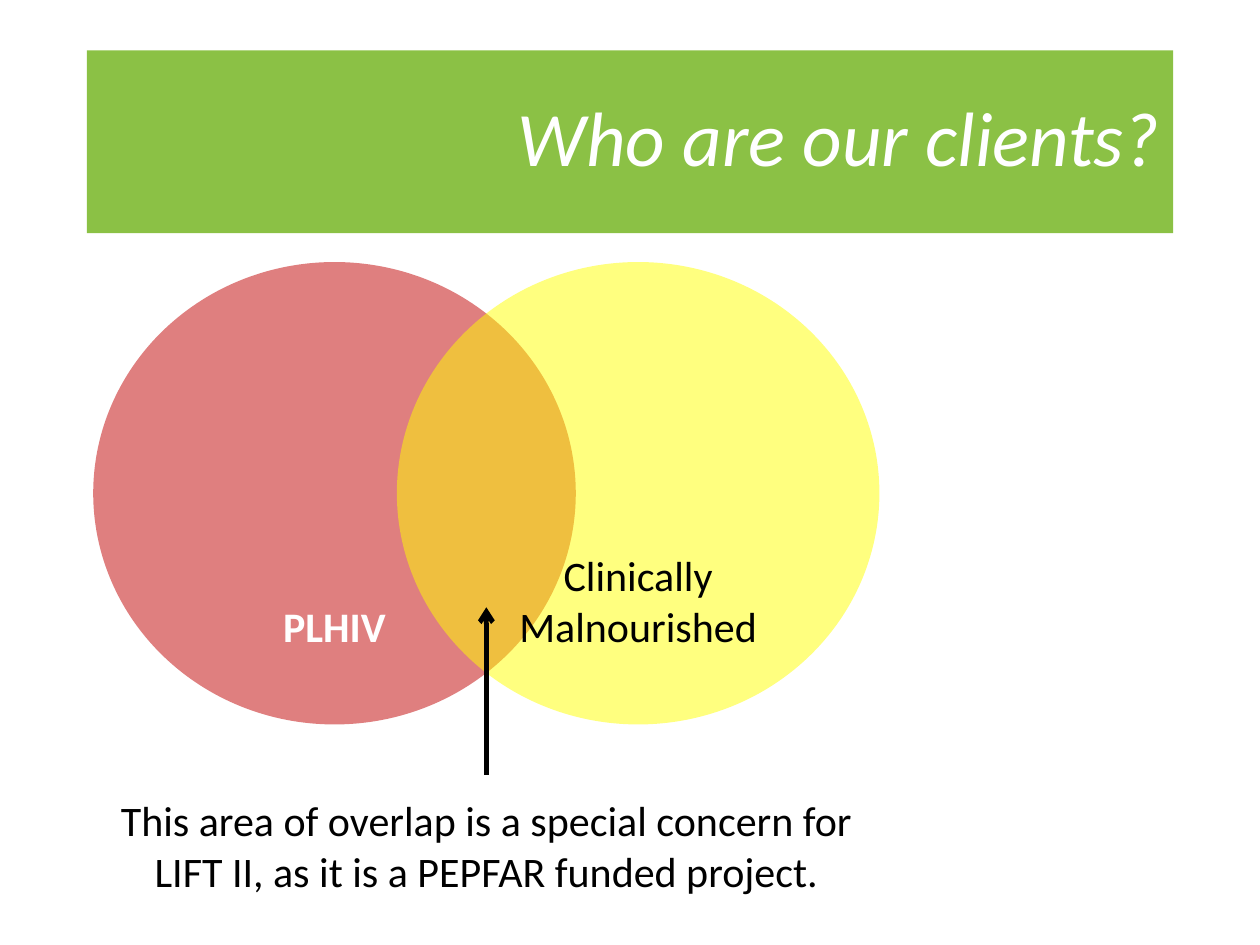
from lxml.etree import SubElement
from pptx import Presentation
from pptx.dml.color import RGBColor
from pptx.enum.shapes import MSO_CONNECTOR, MSO_SHAPE
from pptx.enum.text import MSO_ANCHOR, PP_ALIGN
from pptx.oxml.ns import qn
from pptx.util import Inches, Pt

GREEN = RGBColor(0x8B, 0xC1, 0x45)
RED = RGBColor(0xC0, 0x00, 0x00)
YELLOW = RGBColor(0xFF, 0xFF, 0x00)
WHITE = RGBColor(0xFF, 0xFF, 0xFF)
BLACK = RGBColor(0x00, 0x00, 0x00)
FONT = "Calibri"


def write_text(shape, lines, size, color, align, anchor, bold=False, italic=False):
    frame = shape.text_frame
    frame.word_wrap = True
    frame.vertical_anchor = anchor
    frame.text = "\n".join(lines)
    for para in frame.paragraphs:
        para.alignment = align
        font = para.font
        font.name, font.size = FONT, Pt(size)
        font.bold, font.italic = bold, italic
        font.color.rgb = color


def add_filled_shape(page, kind, box, color):
    shape = page.shapes.add_shape(kind, *map(Inches, box))
    shape.shadow.inherit = False
    shape.fill.solid()
    shape.fill.fore_color.rgb = color
    shape.line.fill.background()
    return shape


def add_title(page, box):
    banner = add_filled_shape(page, MSO_SHAPE.RECTANGLE, box, GREEN)
    write_text(banner, ["Who are our clients?"], 44, WHITE,
               PP_ALIGN.RIGHT, MSO_ANCHOR.MIDDLE, italic=True)
    banner.text_frame.paragraphs[0].line_spacing = 0.9


def add_venn(page, box, circle_width):
    left, top, width, height = box
    circles = [
        (left, RED, ["PLHIV"], WHITE, True),
        (left + width - circle_width, YELLOW, ["Clinically", "Malnourished"], BLACK, False),
    ]
    for x, fill, lines, color, bold in circles:
        circle = add_filled_shape(page, MSO_SHAPE.OVAL, (x, top, circle_width, height), fill)
        # Half transparency lets the overlap show
        rgb = circle.fill._xPr.find(f".//{qn('a:srgbClr')}")
        SubElement(rgb, qn("a:alpha"), val="50000")
        write_text(circle, lines, 24, color, PP_ALIGN.CENTER, MSO_ANCHOR.BOTTOM, bold=bold)


def add_overlap_note(page, box, arrow_bottom, arrow_top):
    left, top, width, height = box
    # Arrow from the note up into the overlap
    center = Inches(left + width / 2)
    arrow = page.shapes.add_connector(
        MSO_CONNECTOR.STRAIGHT, center, Inches(arrow_bottom), center, Inches(arrow_top))
    arrow.line.color.rgb = BLACK
    arrow.line.width = Pt(2.75)
    SubElement(arrow.line._get_or_add_ln(), qn("a:tailEnd"), type="arrow")
    SubElement(arrow._element.spPr, qn("a:effectLst"))

    # Note text
    note = page.shapes.add_textbox(*map(Inches, box))
    write_text(note, ["This area of overlap is a special concern for LIFT II, "
                      "as it is a PEPFAR funded project."],
               24, BLACK, PP_ALIGN.CENTER, MSO_ANCHOR.TOP)


def main():
    deck = Presentation()
    deck.slide_width, deck.slide_height = Inches(10), Inches(7.5)
    page = deck.slides.add_slide(deck.slide_layouts[6])
    add_title(page, (0.69, 0.4, 8.62, 1.45))
    add_venn(page, (0.74, 2.08, 6.24, 3.67), circle_width=3.83)
    add_overlap_note(page, (0.6, 6.26, 6.52, 0.91), arrow_bottom=6.15, arrow_top=4.82)
    deck.save("out.pptx")


if __name__ == "__main__":
    main()
